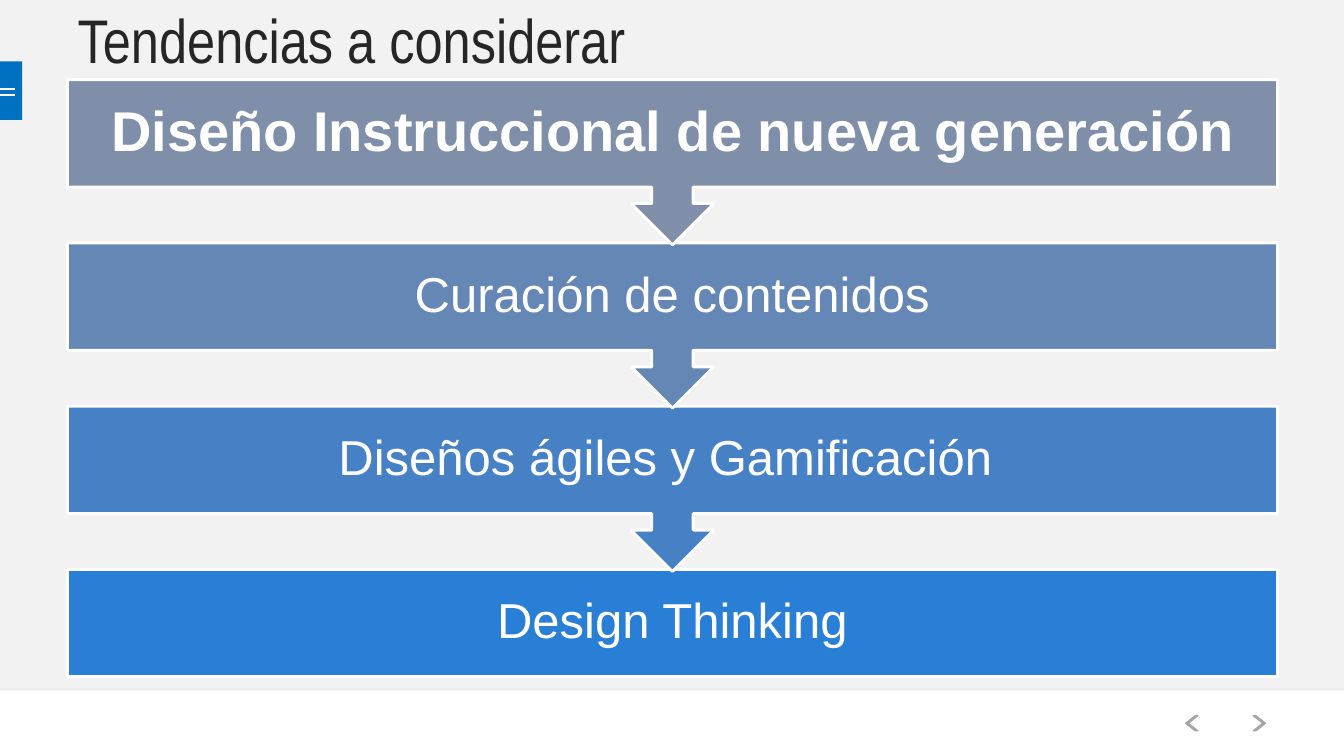
from lxml import etree
from pptx import Presentation
from pptx.dml.color import RGBColor
from pptx.enum.shapes import MSO_CONNECTOR, MSO_SHAPE
from pptx.enum.text import MSO_ANCHOR, MSO_AUTO_SIZE, PP_ALIGN
from pptx.oxml import parse_xml
from pptx.oxml.ns import nsdecls, qn
from pptx.util import Inches, Pt

RECT = MSO_SHAPE.RECTANGLE
CALLOUT = MSO_SHAPE.DOWN_ARROW_CALLOUT
CHEVRON = MSO_SHAPE.CHEVRON
STRAIGHT = MSO_CONNECTOR.STRAIGHT
MIDDLE = MSO_ANCHOR.MIDDLE
LEFT, CENTER = PP_ALIGN.LEFT, PP_ALIGN.CENTER

WHITE = RGBColor(0xFF, 0xFF, 0xFF)
BACKGROUND = RGBColor(0xF2, 0xF2, 0xF2)
INK = RGBColor(0x26, 0x26, 0x26)
MENU_BLUE = RGBColor(0x00, 0x70, 0xC0)
ARROW_GREY = RGBColor(0xA6, 0xA6, 0xA6)
TEAL = RGBColor(0x2E, 0x79, 0x74)
STEPS = [
    ("Diseño Instruccional de nueva generación", RGBColor(0x7F, 0x8F, 0xA9)),
    ("Curación de contenidos", RGBColor(0x64, 0x87, 0xB6)),
    ("Diseños ágiles y Gamificación ", RGBColor(0x47, 0x81, 0xC5)),
    ("Design Thinking", RGBColor(0x29, 0x7F, 0xD5)),
]
MARGIN, STEP_TOP, STEP_PITCH = 0.67, 0.79, 1.62
STEP_W, BOX_H, CALLOUT_H = 12, 1.06, 1.64

prs = Presentation()
prs.slide_width, prs.slide_height = Inches(13.33), Inches(7.5)
s = prs.slides.add_slide(prs.slide_layouts[5])
s.background.fill.solid()
s.background.fill.fore_color.rgb = BACKGROUND


def add_block(kind, x, y, w, h, fill, line=None, weight=1):
    sp = s.shapes.add_shape(kind, Inches(x), Inches(y), Inches(w), Inches(h))
    sp.shadow.inherit = False
    sp.fill.solid()
    sp.fill.fore_color.rgb = fill
    if line is None:
        sp.line.fill.background()
    else:
        sp.line.color.rgb = line
        sp.line.width = Pt(weight)
    return sp


def set_text(sp, text, font, size, color, align):
    tf = sp.text_frame
    tf.text = text
    tf.word_wrap = True
    tf.auto_size = MSO_AUTO_SIZE.NONE
    tf.vertical_anchor = MIDDLE
    p = tf.paragraphs[0]
    p.alignment = align
    f = p.runs[0].font
    f.name, f.size, f.color.rgb = font, Pt(size), color
    return tf


add_block(RECT, 0, 0.61, 0.22, 0.58, MENU_BLUE)
for y in (0.88, 0.94):
    bar = s.shapes.add_connector(STRAIGHT, 0, Inches(y), Inches(0.15), Inches(y))
    bar.line.color.rgb = WHITE
    bar.line.width = Pt(1.5)
    etree.SubElement(bar._element.spPr, qn("a:effectLst"))

footer = add_block(RECT, 0, 6.85, 13.33, 0.68, WHITE)
footer._element.spPr.find(qn("a:effectLst")).append(parse_xml(
    f'<a:outerShdw {nsdecls("a")} blurRad="39370" dist="22860" dir="5400000">'
    '<a:srgbClr val="808080"><a:alpha val="35000"/></a:srgbClr></a:outerShdw>'))

for x, angle in ((11.76, 180), (12.43, 0)):
    arrow = add_block(CHEVRON, x, 7.1, 0.12, 0.15, TEAL, ARROW_GREY)
    arrow.adjustments[0] = 0.79
    arrow.rotation = angle

title = s.shapes.title
title.left, title.top = Inches(MARGIN), Inches(0.08)
title.width, title.height = Inches(11.11), Inches(0.62)
set_text(title, "Tendencias a considerar", "Arial Narrow", 44, INK, LEFT)

for i, (text, color) in reversed(list(enumerate(STEPS))):
    first, last = i == 0, i == len(STEPS) - 1
    kind, height = (RECT, BOX_H) if last else (CALLOUT, CALLOUT_H)
    step = add_block(kind, MARGIN, STEP_TOP + i * STEP_PITCH, STEP_W, height,
                     color, WHITE, 2)
    tf = set_text(step, text, "Arial", 40 if first else 35, WHITE, CENTER)
    inset = Inches(0.31 if first else 0.27)
    tf.margin_left = tf.margin_right = tf.margin_top = tf.margin_bottom = inset
    tf.paragraphs[0].line_spacing = 0.9
    tf.paragraphs[0].runs[0].font.bold = first

prs.save("out.pptx")
